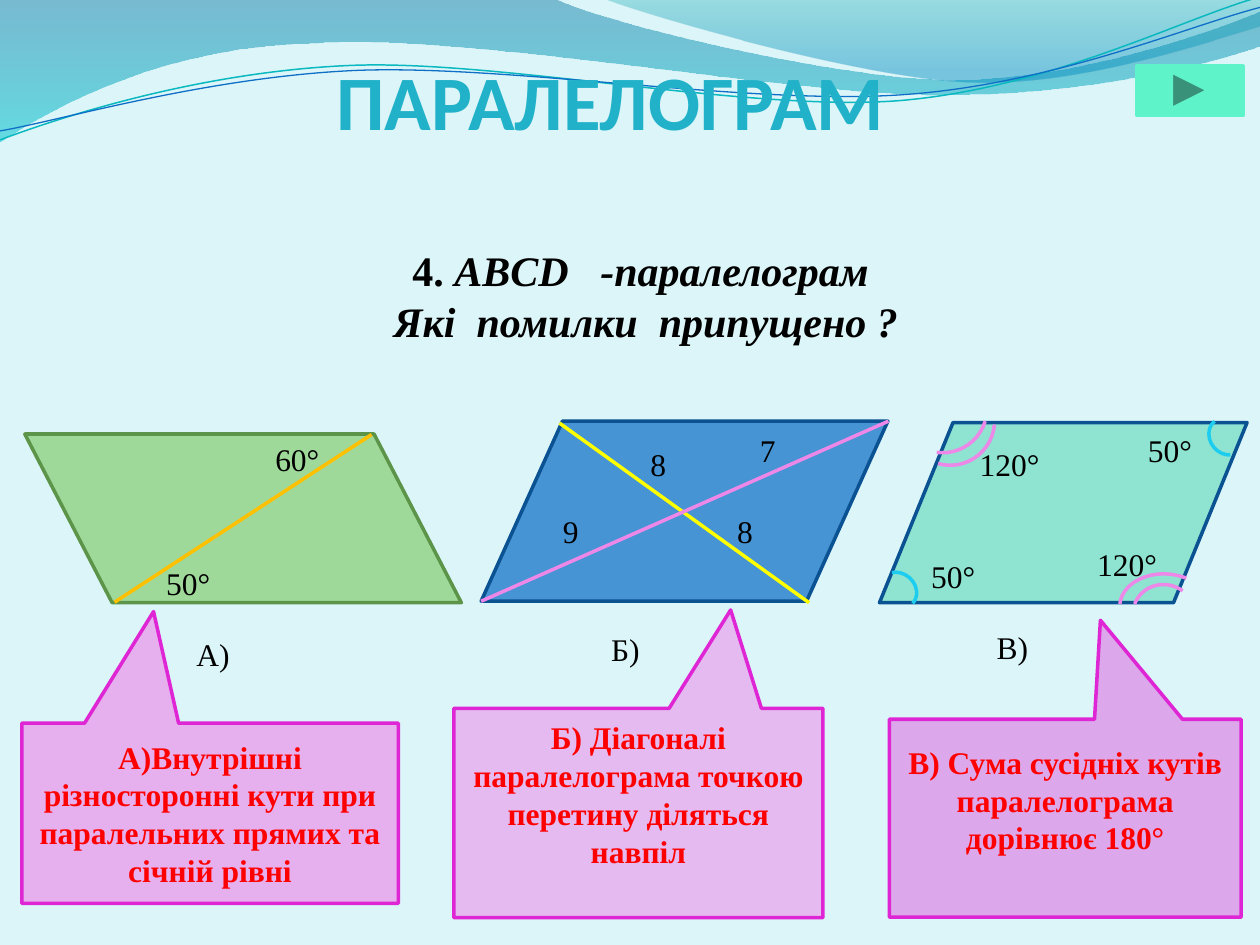
import math

import pptx
import pptx.dml.color
import pptx.enum.shapes
import pptx.enum.text
import pptx.oxml.ns
import pptx.util
from lxml import etree

Cm = pptx.util.Cm
Pt = pptx.util.Pt
RGBColor = pptx.dml.color.RGBColor
SHAPES = pptx.enum.shapes.MSO_SHAPE
ALIGN = pptx.enum.text.PP_ALIGN
ANCHOR = pptx.enum.text.MSO_ANCHOR
qn = pptx.oxml.ns.qn

BACKGROUND = RGBColor(0xDB, 0xF5, 0xF9)
BLACK = RGBColor(0, 0, 0)
RED = RGBColor(0xFF, 0, 0)
YELLOW = RGBColor(0xFF, 0xFF, 0)
ORANGE = RGBColor(0xFF, 0xC0, 0)
PINK = RGBColor(0xED, 0x87, 0xE8)
MAGENTA = RGBColor(0xDE, 0x26, 0xD5)
CYAN = RGBColor(0x1C, 0xCD, 0xF0)
GREEN = RGBColor(0x7C, 0xCA, 0x62)
DARK_GREEN = RGBColor(0x5C, 0x95, 0x49)
BLUE = RGBColor(0x0F, 0x6F, 0xC6)
DARK_BLUE = RGBColor(0x0B, 0x52, 0x92)
MINT = RGBColor(0x6A, 0xDC, 0xBE)
BUTTON = RGBColor(0x5F, 0xF3, 0xCA)
TITLE = RGBColor(0x21, 0xB2, 0xC9)
TEAL = RGBColor(0x0A, 0xB8, 0xBF)
WAVE_BLUE = RGBColor(0x00, 0x74, 0xA1)
WAVE_CYAN = RGBColor(0x00, 0xC6, 0xCF)
WAVE_TEAL = RGBColor(0x00, 0xA1, 0xA9)
WAVE_SKY = RGBColor(0x00, 0x8B, 0xBF)


def turn(point, center, degrees):
    angle = math.radians(degrees)
    x, y = point[0] - center[0], point[1] - center[1]
    return (center[0] + x * math.cos(angle) - y * math.sin(angle),
            center[1] + x * math.sin(angle) + y * math.cos(angle))


class Board:
    font_name = "Times New Roman"
    text_size = 18
    line_width = 2

    def __init__(self, slide):
        self.slide = slide
        self.shapes = slide.shapes

    def set_alpha(self, shape, *percents):
        colors = shape._element.spPr.iter(qn("a:srgbClr"))
        for color, percent in zip(list(colors), percents):
            etree.SubElement(color, qn("a:alpha")).set("val", str(percent * 1000))

    def outline(self, shape, color, width=line_width):
        shape.line.color.rgb = color
        shape.line.width = Pt(width)

    def wave(self, start, segments, stops=None, line=None, width=1, center=(0, 0), rotation=0):
        """A segment is one point for a line or three for a cubic curve."""
        points = [turn(point, center, -rotation)
                  for point in (start, *(point for segment in segments for point in segment))]
        points = [(Cm(x), Cm(y)) for x, y in points]
        builder = self.shapes.build_freeform(*points[0])
        builder.add_line_segments(points[1:], close=stops is not None)
        shape = builder.convert_to_shape()
        shape.rotation = rotation
        shape.shadow.inherit = False
        steps = iter(list(shape._element.spPr.iter(qn("a:lnTo"))))
        for segment in segments:
            first = next(steps)
            if len(segment) == 3:
                first.tag = qn("a:cubicBezTo")
                for _ in range(2):
                    other = next(steps)
                    first.append(other[0])
                    other.getparent().remove(other)
        if stops is None:
            shape.fill.background()
            self.outline(shape, line, width)
            return
        shape.fill.gradient()
        shape.fill.gradient_angle = 270
        for stop, (position, color, _) in zip(shape.fill.gradient_stops, stops):
            stop.position = position
            stop.color.rgb = color
        self.set_alpha(shape, *(alpha for _, _, alpha in stops))
        shape.line.fill.background()

    def figure(self, kind, box, line, fill=None, alpha=100, adjust=(), rotation=0):
        shape = self.shapes.add_shape(kind, *map(Cm, box))
        shape.shadow.inherit = False
        for index, value in enumerate(adjust):
            shape.adjustments[index] = value
        shape.rotation = rotation
        if fill is None:
            shape.fill.background()
        else:
            shape.fill.solid()
            shape.fill.fore_color.rgb = fill
            if alpha < 100:
                self.set_alpha(shape, alpha)
        self.outline(shape, line)
        return shape

    def line(self, start, end, color):
        connector = self.shapes.add_connector(
            pptx.enum.shapes.MSO_CONNECTOR.STRAIGHT, *map(Cm, start + end))
        self.outline(connector, color)
        etree.SubElement(connector._element.spPr, qn("a:effectLst"))

    def run(self, paragraph, text, color=BLACK, size=text_size, bold=False,
            italic=False, name=font_name, spacing=0):
        run = paragraph.add_run()
        run.text = text
        font = run.font
        font.name, font.size, font.bold, font.italic = name, Pt(size), bold, italic
        font.color.rgb = color
        if spacing:
            run._r.get_or_add_rPr().set("spc", str(spacing * 100))

    def text(self, box, paragraphs, align=ALIGN.LEFT, wrap=True, anchor=ANCHOR.TOP):
        frame = self.shapes.add_textbox(*map(Cm, box)).text_frame
        frame.word_wrap = wrap
        frame.vertical_anchor = anchor
        frame.auto_size = pptx.enum.text.MSO_AUTO_SIZE.SHAPE_TO_FIT_TEXT
        for index, runs in enumerate(paragraphs):
            paragraph = frame.add_paragraph() if index else frame.paragraphs[0]
            paragraph.alignment = align
            for text, style in runs:
                self.run(paragraph, text, **style)

    def callout(self, box, tip, text, fill, alpha, bottom):
        shape = self.figure(SHAPES.RECTANGULAR_CALLOUT, box, MAGENTA, fill, alpha, tip)
        frame = shape.text_frame
        frame.word_wrap = True
        frame.vertical_anchor = ANCHOR.MIDDLE
        frame.margin_bottom = Cm(bottom)
        frame.paragraphs[0].alignment = ALIGN.CENTER
        self.run(frame.paragraphs[0], text, RED, bold=True)


def main():
    presentation = pptx.Presentation()
    presentation.slide_width, presentation.slide_height = Cm(25.4), Cm(19.05)
    slide = presentation.slides.add_slide(presentation.slide_layouts[6])
    slide.background.fill.solid()
    slide.background.fill.fore_color.rgb = BACKGROUND
    board = Board(slide)

    # Waves along the top
    board.wave((0, 0), [
        [(11.18, -0.03)],
        [(12.09, 0.43), (16.87, 1.6), (19.25, 1.6)],
        [(21.67, 1.6), (24.33, 0.66), (25.4, 0.23)],
        [(25.43, 0.91)],
        [(24.97, 1.12), (22.1, 1.93), (18.95, 1.91)],
        [(15.8, 1.91), (9.7, 0.71), (6.53, 0.86)],
        [(3.28, 0.91), (1.17, 2.11), (-0.03, 2.87)],
        [(0, 0)],
    ], stops=[(0, WAVE_BLUE, 45), (1, WAVE_CYAN, 55)])
    board.wave((12.17, -0.03), [
        [(12.93, 0.28), (17.32, 1.57), (19.53, 1.65)],
        [(21.74, 1.75), (24.41, 0.81), (25.4, 0.53)],
        [(25.4, 0)],
        [(12.17, -0.03)],
    ], stops=[(0, WAVE_TEAL, 30), (0.8, WAVE_SKY, 45)])
    board.wave((0, 2.82), [
        [(1.22, 2.36), (4.01, 1.45), (7.04, 1.32)],
        [(10.03, 1.19), (15.06, 2.26), (18.11, 2.03)],
        [(21.16, 1.78), (23.83, 0.38), (25.35, -0.05)],
    ], line=TEAL, width=0.85, center=(12.67, 1.46), rotation=357.3)
    board.wave((0, 2.64), [
        [(1.19, 2.44), (4.17, 1.55), (7.19, 1.42)],
        [(10.24, 1.3), (15.16, 2.13), (18.21, 1.91)],
        [(21.23, 1.7), (23.93, 0.53), (25.4, 0.15)],
    ], line=BLUE, width=0.75, center=(12.69, 1.5), rotation=357.3)

    # Question; wide gaps are single spaces with letter spacing
    bold = dict(size=24, bold=True)
    slanted = dict(bold, italic=True)
    gap, wide_gap = (" ", dict(slanted, spacing=6)), (" ", dict(slanted, spacing=12))
    board.text((3.9, 4.81, 18.24, 2.31), [
        [("4. ", bold), ("ABCD", slanted), wide_gap, ("-паралелограм ", slanted)],
        [("Які", slanted), gap, ("помилки", slanted), gap, ("припущено ?", slanted)],
    ], ALIGN.CENTER)

    # Parallelograms with their diagonals
    slanted_box = SHAPES.FLOWCHART_DATA
    mirrored = board.figure(slanted_box, (0.5, 8.75, 8.8, 3.4), DARK_GREEN, GREEN, 63,
                            rotation=180)
    mirrored._element.spPr.find(qn("a:xfrm")).set("flipV", "1")
    board.line((7.49, 8.76), (2.31, 12.14), ORANGE)
    board.figure(slanted_box, (9.7, 8.49, 8.2, 3.63), DARK_BLUE, BLUE, 72)
    board.line((11.28, 8.53), (16.31, 12.15), YELLOW)
    board.line((9.7, 12.12), (17.91, 8.49), PINK)
    board.figure(slanted_box, (17.73, 8.52, 7.41, 3.63), DARK_BLUE, MINT, 68)

    # Angle marks
    for box, rotation, adjust, color in (
        ((18.26, 7.59, 1.8, 1.78), 95.1, (162, 6.57), PINK),
        ((18.11, 7.34, 1.8, 1.78), 107.2, (162, 210.57), PINK),
        ((22.86, 11.76, 1.22, 1.27), 290.3, (162, 10.23), PINK),
        ((22.81, 11.33, 1.4, 1.88), 275.2, (162.4, 16.88), PINK),
        ((17.71, 11.56, 0.79, 0.69), 41.4, (125.89, 0), CYAN),
        ((24.34, 8.45, 0.79, 0.69), 230.1, (125.89, 0), CYAN),
    ):
        board.figure(SHAPES.ARC, box, color, adjust=adjust, rotation=rotation)

    # Angles, lengths and figure letters
    widths = {1: 0.97, 2: 1.6, 3: 1.6, 4: 1.93}
    for text, left, top in (
        ("50°", 3.1, 11.24), ("60°", 5.3, 8.74), ("50°", 18.52, 11.1),
        ("50°", 22.89, 8.56), ("120°", 19.5, 8.84), ("120°", 21.87, 10.87),
        ("8", 12.86, 8.84), ("8", 14.61, 10.19), ("9", 11.1, 10.19), ("7", 15.07, 8.56),
        ("А)", 3.71, 12.67), ("Б)", 12.07, 12.57), ("В)", 19.84, 12.53),
    ):
        board.text((left, top, widths[len(text)], 1.02), [[(text, {})]])

    # Title
    board.text((6.48, 0.94, 11.66, 2.13),
               [[("ПАРАЛЕЛОГРАМ", dict(color=TITLE, size=44, bold=True, name="Calibri"))]],
               ALIGN.CENTER, wrap=False, anchor=ANCHOR.BOTTOM)

    # Answers
    board.callout((0.44, 14.58, 7.59, 3.63), (-0.15, -1.12),
                  "А)Внутрішні різносторонні кути при паралельних прямих та січній рівні",
                  PINK, 63, bottom=0.13)
    board.callout((9.15, 14.28, 7.44, 4.22), (0.25, -0.97),
                  "Б) Діагоналі паралелограма точкою перетину діляться навпіл",
                  PINK, 53, bottom=0.89)
    board.callout((17.93, 14.5, 7.09, 3.99), (0.1, -1),
                  "В) Сума сусідніх кутів паралелограма дорівнює 180°",
                  MAGENTA, 37, bottom=0.88)

    # Forward button
    board.figure(SHAPES.ACTION_BUTTON_FORWARD_OR_NEXT, (22.91, 1.32, 2.16, 1),
                 BUTTON, BUTTON)
    presentation.save("out.pptx")


if __name__ == "__main__":
    main()
